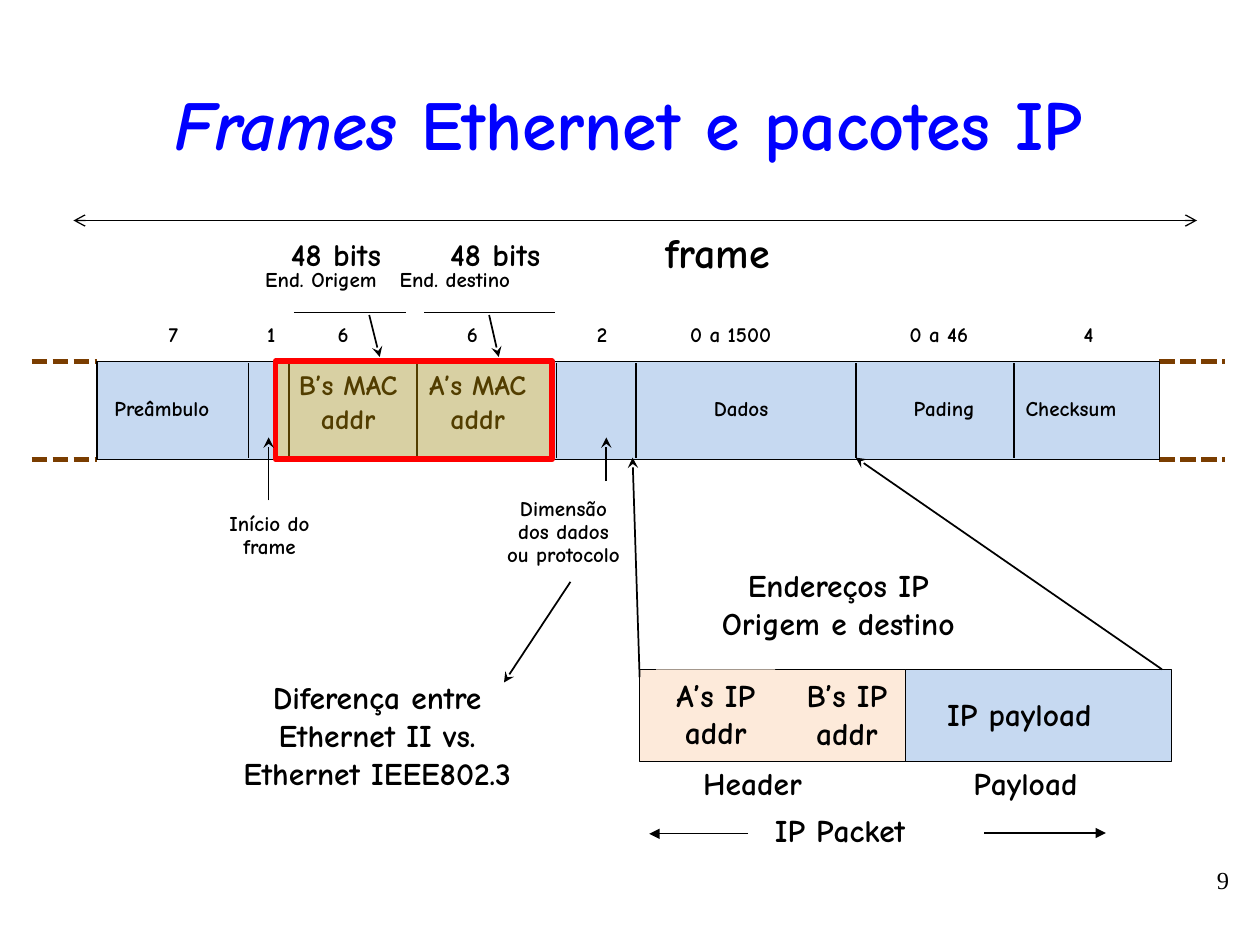
import pptx
import pptx.util
import pptx.dml.color
import pptx.enum.dml
import pptx.enum.shapes
import pptx.enum.text
import pptx.oxml
import pptx.oxml.ns

Pt = pptx.util.Pt
ALIGN = pptx.enum.text.PP_ALIGN

THEME = {
    "font": "Comic Neue", "serif": "Times New Roman",
    "ink": "000000", "title": "0000FF", "blue": "C6D9F1", "peach": "FDEADA",
    "brown": "7A3D00", "amber": "FFC000", "red": "FF0000",
    "head": 40, "large": 24, "body": 18, "mid": 16, "page": 14, "small": 12,
}

# Frame bar: left, top, right, bottom
BAR = (55.5, 206.5, 662.5, 262.5)
SPLITS = [142, 165, 238.5, 318, 363.5, 489, 579.5]
DASH = 37.5

# Field sizes in bytes: text, centre, width
BYTES = [("7", 99, 20), ("1", 155, 20), ("6", 196, 20), ("6", 270, 20),
         ("2", 344, 20), ("0 a 1500", 417.5, 62), ("0 a 46", 536.5, 45),
         ("4", 622, 20)]

# Field names: text, left, width
FIELDS = [("Preâmbulo", 58.5, 68), ("Dados", 401, 45), ("Pading", 515, 49),
          ("Checksum", 579.5, 65)]

# Labels: text, left, top, width, size
LABELS = [
    ("frame", 373, 126, 74, "large"),
    ("48 bits", 160, 131, 64, "body"),
    ("48 bits", 250.5, 131, 65, "body"),
    ("Endereços IP\nOrigem e destino", 397, 320, 164, "body"),
    ("IP payload", 529, 393.5, 107, "body"),
    ("Header", 395, 433, 70, "body"),
    ("Payload", 549.5, 433, 73, "body"),
    ("IP Packet", 436, 460, 88, "body"),
    ("Diferença entre\nEthernet II vs.\nEthernet IEEE802.3", 132, 384, 167, "body"),
    ("B’s MAC\naddr", 159, 206.5, 80, "mid"),
    ("A’s MAC\naddr", 232.5, 206.5, 81, "mid"),
]
NOTES = [
    ("End. Origem", 145, 150.5, 77),
    ("End. destino", 221.5, 150.5, 77),
    ("Início do\nframe", 124, 290, 60),
]

# IP packet: left, top, width, height, colour
PACKET = [(517.5, 382.5, 152, 52.5, "blue"), (365.5, 382.5, 152, 52.5, "peach")]
HOSTS = [("A’s IP\naddr", 375, 382.5, 68), ("B’s IP\naddr", 451, 383, 66)]

# Pointers: start x, y, end x, y
POINTS = [(346.5, 275, 346.5, 250), (153.5, 286, 153.5, 250),
          (211, 180, 217, 204), (279.5, 180, 285, 204),
          (365.5, 387, 361.5, 261.5), (664, 382.5, 489, 261.5),
          (326, 332.5, 288, 390)]
SPANS = [(562.5, 476, 632, 476), (427.5, 476.5, 371, 476.5)]
RULES = [(168, 178.5, 232, 178.5), (242.5, 178.5, 317, 178.5)]

deck = pptx.Presentation()
deck.slide_width, deck.slide_height = Pt(720), Pt(540)
slide = deck.slides.add_slide(deck.slide_layouts[6])
shapes = slide.shapes


def tint(name):
    return pptx.dml.color.RGBColor.from_string(THEME[name])


def style(font, size, color="ink", face="font", bold=True):
    font.size, font.name, font.bold = Pt(THEME[size]), THEME[face], bold
    font.color.rgb = tint(color)


def write(shape, text, size, space=None, wrap=False, align=ALIGN.CENTER, **look):
    frame = shape.text_frame
    frame.text = text
    frame.word_wrap = wrap
    frame.vertical_anchor = pptx.enum.text.MSO_ANCHOR.TOP
    if not wrap:
        frame.margin_left = frame.margin_right = Pt(1)
    for para in frame.paragraphs:
        para.alignment = align
        para.line_spacing = space
        for run in para.runs:
            style(run.font, size, **look)
    return frame


def label(text, left, top, width, size, **look):
    lines = text.count("\n") + 1
    high = 7.2 + lines * THEME[size] * 1.2
    box = shapes.add_textbox(Pt(left), Pt(top), Pt(width), Pt(high))
    return write(box, text, size, **look)


def block(left, top, width, height, fill, edge=None, thick=0.75):
    kind = pptx.enum.shapes.MSO_SHAPE.RECTANGLE
    shape = shapes.add_shape(kind, Pt(left), Pt(top), Pt(width), Pt(height))
    shape.shadow.inherit = False
    shape.fill.solid()
    shape.fill.fore_color.rgb = tint(fill)
    if edge:
        shape.line.color.rgb = tint(edge)
        shape.line.width = Pt(thick)
    else:
        shape.line.fill.background()
    return shape


def child(node, tag, **attrs):
    part = pptx.oxml.parse_xml(
        f'<a:{tag} {pptx.oxml.ns.nsdecls("a")}/>')
    for key, value in attrs.items():
        part.set(key, value)
    node.append(part)


def line(ends, thick=1, color="ink", head=None, tail=None, dash=False):
    kind = pptx.enum.shapes.MSO_CONNECTOR.STRAIGHT
    link = shapes.add_connector(kind, *[Pt(end) for end in ends])
    link.line.width = Pt(thick)
    link.line.color.rgb = tint(color)
    if dash:
        link.line.dash_style = pptx.enum.dml.MSO_LINE.SQUARE_DOT
    edge = link.line._get_or_add_ln()
    if head:
        child(edge, "headEnd", type=head)
    if tail:
        child(edge, "tailEnd", type=tail)
    child(link._element.spPr, "effectLst")


# Title
box = shapes.add_textbox(Pt(18), Pt(31), Pt(682), Pt(78))
frame = write(box, "Frames", "head", wrap=True, color="title")
frame.vertical_anchor = pptx.enum.text.MSO_ANCHOR.MIDDLE
first = frame.paragraphs[0].runs[0]
first.font.italic = True
rest = frame.paragraphs[0].add_run()
rest.text = " Ethernet e pacotes IP"
style(rest.font, "head", "title")

# IP packet
for left, top, width, height, fill in PACKET:
    block(left, top, width, height, fill, "ink")
for text, left, top, width in HOSTS:
    write(block(left, top, width, 51, "peach"), text, "body")

# Frame bar with dashed ends and field splits
left, top, right, bottom = BAR
for y in (top, bottom):
    for x in (left - DASH, right):
        line((x, y, x + DASH, y), 3, "brown", dash=True)
block(left, top, right - left, bottom - top, "blue", "ink")
for x in SPLITS:
    line((x, top + 1, x, bottom - 1))

# Field names, sizes and notes
for text, x, width in FIELDS:
    label(text, x, 224, width, "small", space=0.9)
for text, mid, width in BYTES:
    label(text, mid - width / 2, 182, width, "small", space=0.9)
for text, x, y, width in NOTES:
    label(text, x, y, width, "small", space=0.9)
label("Dimensão\ndos dados\nou protocolo", 279.5, 281.5, 85, "small", space=0.9)
for item in LABELS:
    label(*item)

# Address highlight
mark = block(157.5, top, 158, bottom - top, "amber", "red", 3.25)
fill = mark._element.spPr.find(pptx.oxml.ns.qn("a:solidFill"))
child(fill[0], "alpha", val="32000")

# Arrows and rules
for ends in POINTS:
    line(ends, tail="stealth")
for ends in SPANS:
    line(ends, 0.75, tail="triangle")
for ends in RULES:
    line(ends, 0.75)
line((42, 126, 684, 126), 0.75, head="arrow", tail="arrow")

# Page number
label("9", 541.5, 491, 168, "page", wrap=True, align=ALIGN.RIGHT,
      face="serif", bold=False)

deck.save("out.pptx")
